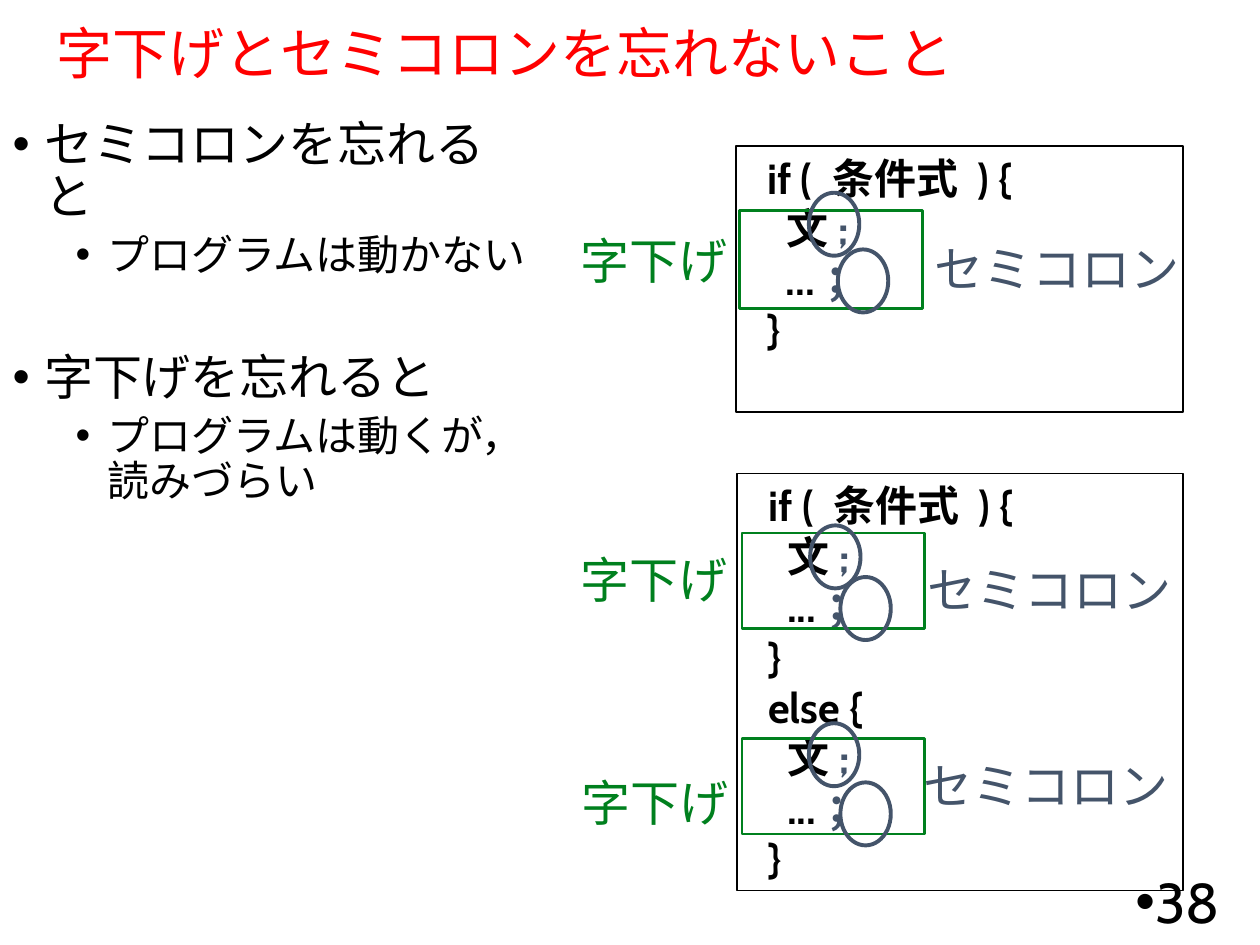
from lxml.etree import SubElement
from pptx import Presentation
from pptx.dml.color import RGBColor
from pptx.enum.shapes import MSO_SHAPE as Shape
from pptx.enum.text import MSO_ANCHOR as Anchor, MSO_AUTO_SIZE as AutoSize, PP_ALIGN as Align
from pptx.oxml.ns import qn
from pptx.util import Inches, Pt

RED = RGBColor(0xFF, 0x00, 0x00)
BLACK = RGBColor(0x00, 0x00, 0x00)
GREEN = RGBColor(0x00, 0x80, 0x1E)
SLATE = RGBColor(0x44, 0x54, 0x6A)
FONT = "Cabin"

BLOCK = [[("    文", BLACK), (";", SLATE)],
         [("    ...", BLACK), ("；", SLATE)],
         [("  }", BLACK)]]
IF_CODE = [[("  if ( 条件式 ) {", BLACK)], *BLOCK]
IF_ELSE_CODE = [*IF_CODE, [("  else {", BLACK)], *BLOCK]


def write(paragraph, text, size, color=BLACK, bold=False):
    run = paragraph.add_run()
    run.text = text
    run.font.name = FONT
    run.font.size = Pt(size)
    run.font.bold = bold
    run.font.color.rgb = color


def add_bullet(paragraph, margin=0, hanging=0):
    props = paragraph._p.get_or_add_pPr()
    props.set("marL", str(Inches(margin)))
    props.set("indent", str(-Inches(hanging)))
    SubElement(props, qn("a:buFont"), typeface="Arial")
    SubElement(props, qn("a:buChar"), char="•")


def place(shape, left, top, width, height):
    shape.left, shape.top = Inches(left), Inches(top)
    shape.width, shape.height = Inches(width), Inches(height)


class SlideBuilder:
    def __init__(self, slide, code_size=24, label_size=28):
        self.slide = slide
        self.code_size = code_size
        self.label_size = label_size

    def title(self, text, box):
        title = self.slide.shapes.title
        place(title, *box)
        frame = title.text_frame
        frame.auto_size = AutoSize.NONE
        frame.vertical_anchor = Anchor.MIDDLE
        heading = frame.paragraphs[0]
        heading.alignment = Align.LEFT
        heading.line_spacing = 0.9
        write(heading, text, 32, RED)

    def body(self, items, box):
        """Fill the body with (text, level, space before) items."""
        body = self.slide.placeholders[1]
        place(body, *box)
        frame = body.text_frame
        frame.auto_size = AutoSize.NONE
        for i, (text, level, before) in enumerate(items):
            item = frame.add_paragraph() if i else frame.paragraphs[0]
            item.level = level
            item.line_spacing = 0.9
            item.space_before = Pt(before)
            add_bullet(item, 0.25 + 0.5 * level, 0.25)
            write(item, text, 24 if level else 28)

    def outline(self, kind, box, color, weight):
        shape = self.slide.shapes.add_shape(kind, *map(Inches, box))
        shape.shadow.inherit = False
        shape.fill.background()
        shape.line.color.rgb = color
        shape.line.width = Pt(weight)
        return shape

    def code(self, lines, box):
        frame = self.outline(Shape.RECTANGLE, box, BLACK, 0.75).text_frame
        frame.word_wrap = True
        frame.vertical_anchor = Anchor.TOP
        for i, parts in enumerate(lines):
            line = frame.add_paragraph() if i else frame.paragraphs[0]
            line.alignment = Align.LEFT
            for text, color in parts:
                write(line, text, self.code_size, color, bold=True)

    def indent_frame(self, left, top, height):
        self.outline(Shape.RECTANGLE, (left, top, 1.45, height), GREEN, 1.5)

    def semicolon_ring(self, left, top):
        self.outline(Shape.OVAL, (left, top, 0.4, 0.5), SLATE, 2.25)

    def text_box(self, box):
        return self.slide.shapes.add_textbox(*map(Inches, box)).text_frame

    def label(self, text, left, top, width, color):
        frame = self.text_box((left, top, width, 0.57))
        frame.word_wrap = False
        write(frame.paragraphs[0], text, self.label_size, color)

    def page_number(self, number, box):
        frame = self.text_box(box)
        frame.word_wrap = True
        frame.vertical_anchor = Anchor.MIDDLE
        page = frame.paragraphs[0]
        page.alignment = Align.RIGHT
        add_bullet(page)
        write(page, number, 32)


def main():
    deck = Presentation()
    deck.slide_width, deck.slide_height = Inches(10), Inches(7.5)
    builder = SlideBuilder(deck.slides.add_slide(deck.slide_layouts[1]))

    builder.title("字下げとセミコロンを忘れないこと", (0.35, 0.19, 9.25, 0.51))
    builder.body([("セミコロンを忘れると", 0, 0),
                  ("プログラムは動かない", 1, 5),
                  ("字下げを忘れると", 0, 42),
                  ("プログラムは動くが，読みづらい", 1, 5)],
                 (0, 0.9, 4.31, 5.83))
    builder.page_number("38", (7.53, 6.95, 2.25, 0.4))

    builder.code(IF_ELSE_CODE, (5.85, 3.76, 3.54, 3.31))
    for top in (4.23, 5.86):
        builder.indent_frame(5.89, top, 0.76)
    builder.code(IF_CODE, (5.84, 1.16, 3.55, 2.11))
    builder.indent_frame(5.87, 1.67, 0.78)

    for left, top in ((6.42, 1.53), (6.65, 1.98), (6.43, 4.17),
                      (6.67, 4.58), (6.42, 5.74), (6.67, 6.21)):
        builder.semicolon_ring(left, top)
    for left, top in ((4.51, 1.78), (4.51, 4.31), (4.52, 6.08)):
        builder.label("字下げ", left, top, 1.38, GREEN)
    for left, top in ((7.32, 1.84), (7.26, 4.39), (7.23, 5.95)):
        builder.label("セミコロン", left, top, 2.17, SLATE)

    deck.save("out.pptx")


if __name__ == "__main__":
    main()
